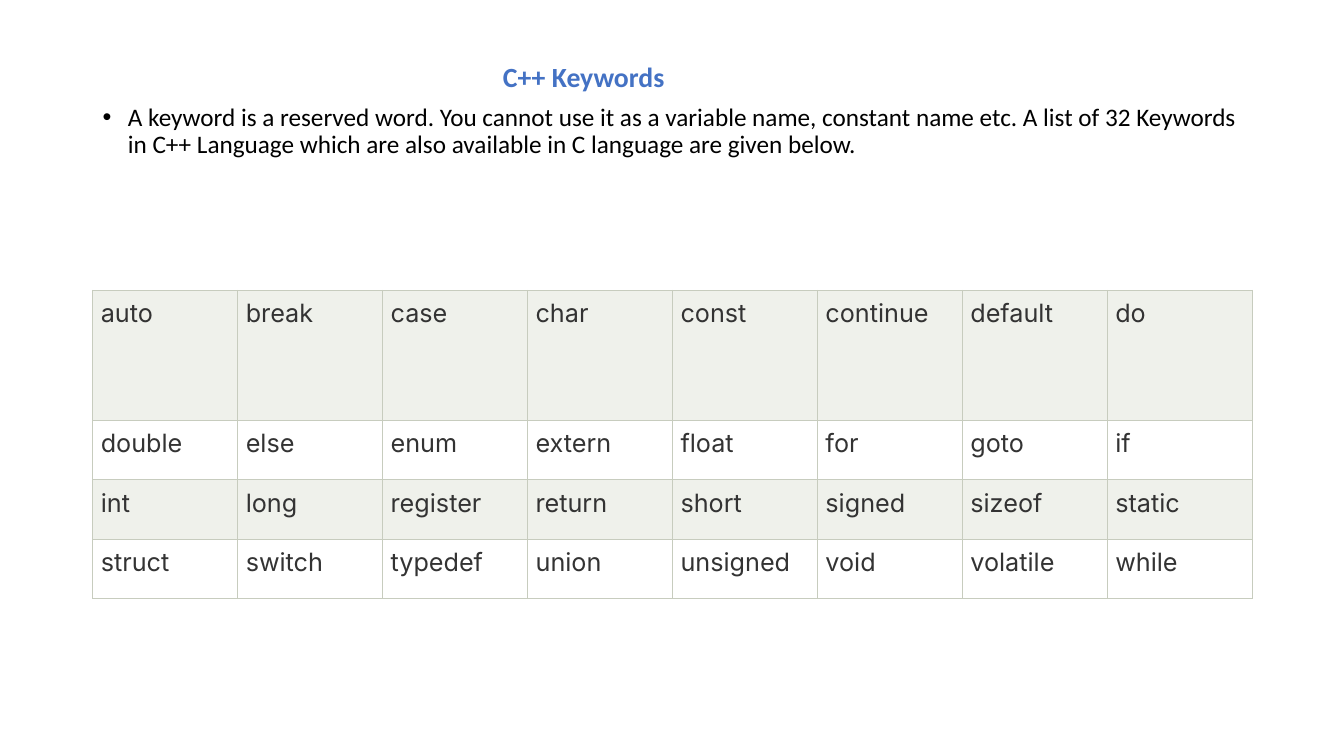
import pptx
import pptx.util
import pptx.dml.color
import pptx.enum.text
import pptx.oxml
from dataclasses import dataclass
from lxml import etree
from pptx.util import Inches


@dataclass(frozen=True)
class Theme:
    heading: str = "4472C4"
    body: str = "000000"
    cell_text: str = "333333"
    border: str = "C7CCBE"
    bands: tuple = ("EFF1EB", "FFFFFF")
    text_font: str = "Calibri"
    table_font: str = "Inter"
    heading_size: float = 19.8
    body_size: float = 18
    border_width: float = 0.75


THEME = Theme()
LEFT, WIDTH = 0.92, 11.5
CELL_MARGIN = 0.08
ROW_HEIGHTS = (1.29, 0.59, 0.59, 0.59)
KEYWORDS = (
    "auto break case char const continue default do",
    "double else enum extern float for goto if",
    "int long register return short signed sizeof static",
    "struct switch typedef union unsigned void volatile while",
)


def rgb(color):
    return pptx.dml.color.RGBColor.from_string(color)


def style_paragraph(paragraph, font_name, size, color, bold=False):
    paragraph.font.name = font_name
    paragraph.font.size = pptx.util.Pt(size)
    paragraph.font.bold = bold
    paragraph.font.color.rgb = rgb(color)


def add_text_box(slide, top, height, text):
    shape = slide.shapes.add_textbox(
        Inches(LEFT), Inches(top), Inches(WIDTH), Inches(height))
    shape.text_frame.word_wrap = True
    paragraph = shape.text_frame.paragraphs[0]
    paragraph.text = text
    paragraph.line_spacing = 0.9
    return shape.text_frame, paragraph


def set_indent(paragraph, left, first_line=0):
    properties = paragraph._p.get_or_add_pPr()
    properties.set("marL", str(Inches(left)))
    properties.set("indent", str(Inches(first_line)))
    return properties


def add_heading(slide, text):
    frame, paragraph = add_text_box(slide, 0.4, 0.59, text)
    frame.vertical_anchor = pptx.enum.text.MSO_ANCHOR.MIDDLE
    frame.margin_top = Inches(0.22)
    set_indent(paragraph, 3.97)
    style_paragraph(paragraph, THEME.text_font, THEME.heading_size,
                    THEME.heading, bold=True)


def add_bullet(slide, text):
    _, paragraph = add_text_box(slide, 0.99, 1.5, text)
    properties = set_indent(paragraph, 0.25, -0.25)
    bullet_font = etree.SubElement(properties, pptx.oxml.ns.qn("a:buFont"))
    bullet_font.set("typeface", "Arial")
    bullet = etree.SubElement(properties, pptx.oxml.ns.qn("a:buChar"))
    bullet.set("char", "•")
    style_paragraph(paragraph, THEME.text_font, THEME.body_size, THEME.body)


def set_borders(cell):
    properties = cell._tc.get_or_add_tcPr()
    for side in ("lnL", "lnR", "lnT", "lnB"):
        line = etree.SubElement(properties, pptx.oxml.ns.qn(f"a:{side}"))
        line.set("w", str(pptx.util.Pt(THEME.border_width)))
        fill = etree.SubElement(line, pptx.oxml.ns.qn("a:solidFill"))
        color = etree.SubElement(fill, pptx.oxml.ns.qn("a:srgbClr"))
        color.set("val", THEME.border)


def fill_cell(cell, text, band):
    set_borders(cell)
    cell.fill.solid()
    cell.fill.fore_color.rgb = rgb(band)
    cell.margin_left = cell.margin_right = Inches(CELL_MARGIN)
    cell.margin_top = cell.margin_bottom = Inches(CELL_MARGIN)
    paragraph = cell.text_frame.paragraphs[0]
    paragraph.text = text
    paragraph.alignment = pptx.enum.text.PP_ALIGN.JUSTIFY
    style_paragraph(paragraph, THEME.table_font, THEME.body_size,
                    THEME.cell_text)


def add_keyword_table(slide):
    rows = [line.split() for line in KEYWORDS]
    column_count = len(rows[0])
    table = slide.shapes.add_table(
        len(rows), column_count, Inches(LEFT), Inches(2.88),
        Inches(WIDTH), Inches(sum(ROW_HEIGHTS))).table
    table.first_row = False
    table.horz_banding = False
    for column in table.columns:
        column.width = Inches(WIDTH / column_count)
    for row_index, words in enumerate(rows):
        table.rows[row_index].height = Inches(ROW_HEIGHTS[row_index])
        band = THEME.bands[row_index % 2]
        for column_index, word in enumerate(words):
            fill_cell(table.cell(row_index, column_index), word, band)


def main():
    presentation = pptx.Presentation()
    presentation.slide_width = Inches(13.33)
    presentation.slide_height = Inches(7.5)
    slide = presentation.slides.add_slide(presentation.slide_layouts[6])

    # Heading and introduction
    add_heading(slide, "C++ Keywords")
    add_bullet(slide, "A keyword is a reserved word. You cannot use it as a "
               "variable name, constant name etc. A list of 32 Keywords in C++ "
               "Language which are also available in C language are given below.")

    # Keyword grid
    add_keyword_table(slide)

    presentation.save("out.pptx")


if __name__ == "__main__":
    main()
